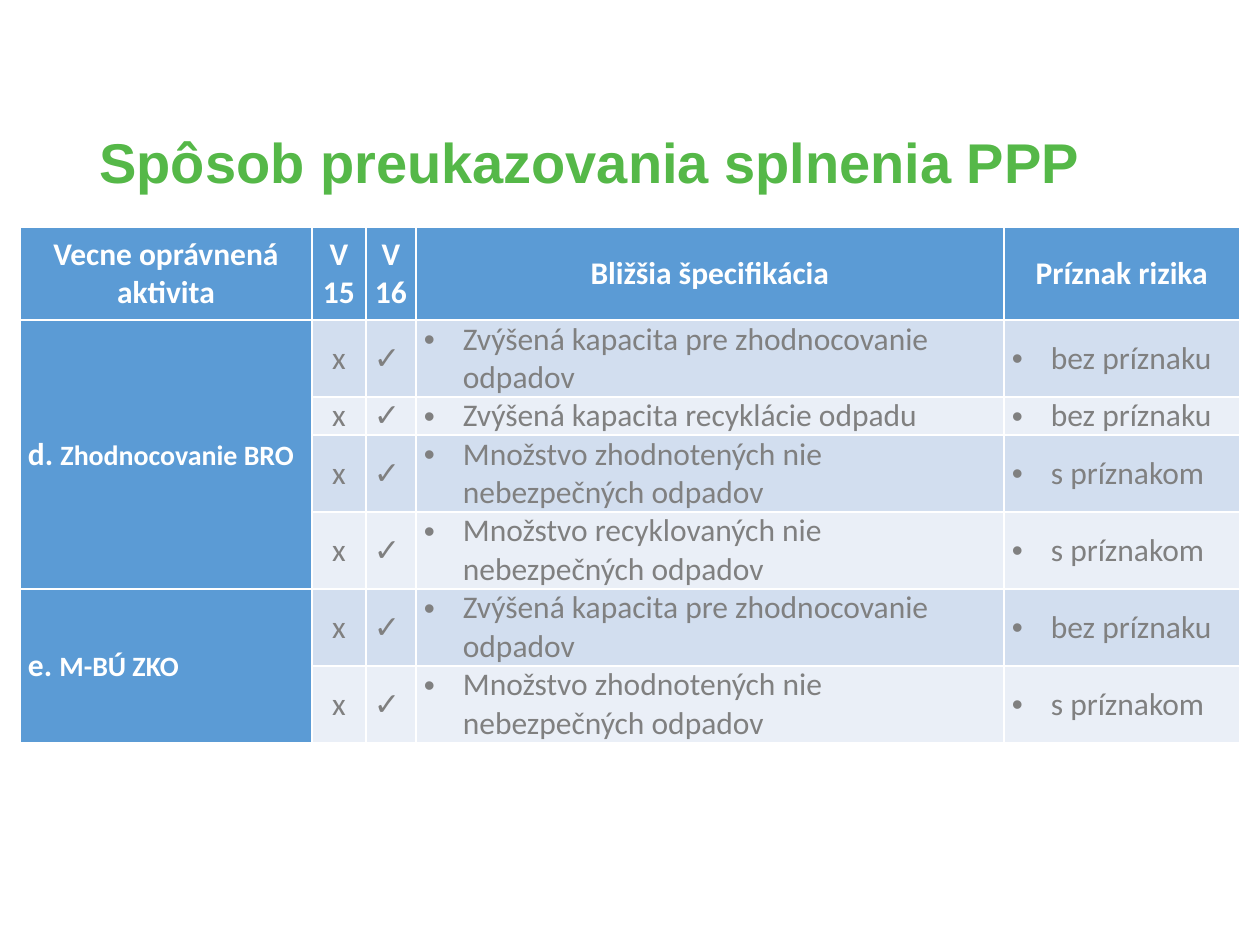
from lxml import etree
from pptx import Presentation, util as u
from pptx.dml.color import RGBColor
from pptx.enum import text
from pptx.oxml.ns import qn

# Content
TITLE = "Spôsob preukazovania splnenia PPP"
HEADERS = ["Vecne oprávnená aktivita", "V 15", "V 16", "Bližšia špecifikácia", "Príznak rizika"]
CAPACITY = "Zvýšená kapacita pre zhodnocovanie odpadov"
RECOVERED = "Množstvo zhodnotených nie nebezpečných odpadov"
ACTIVITIES = [
    ("d. ", "Zhodnocovanie BRO", [
        (CAPACITY, "bez príznaku"),
        ("Zvýšená kapacita recyklácie odpadu", "bez príznaku"),
        (RECOVERED, "s príznakom"),
        ("Množstvo recyklovaných nie nebezpečných odpadov", "s príznakom"),
    ]),
    ("e. ", "M-BÚ ZKO", [
        (CAPACITY, "bez príznaku"),
        (RECOVERED, "s príznakom"),
    ]),
]

# Layout in px, 126 to the inch
COLUMNS = [292, 54, 50, 588, 236]
ROWS = [93, 77, 38, 77, 77, 77, 77]
INSET, HANG = 8, 39
GREEN, BLUE, WHITE, GREY = "55B848", "5B9BD5", "FFFFFF", "808080"
BANDS = ["D2DEEF", "EAEFF7"]
LEFT, CENTER, JUSTIFY = text.PP_ALIGN.LEFT, text.PP_ALIGN.CENTER, text.PP_ALIGN.JUSTIFY


def px(n):
    return u.Emu(round(n * 914400 / 126))


def rgb(value):
    return RGBColor.from_string(value)


def style(font, name, size, color, bold):
    font.name, font.size, font.bold = name, u.Pt(size), bold
    font.color.rgb = rgb(color)


def add_bullet(paragraph):
    props = paragraph._p.get_or_add_pPr()
    props.set("marL", str(px(HANG)))
    props.set("indent", str(-px(HANG)))
    etree.SubElement(props, qn("a:buFont")).set("typeface", "Arial")
    etree.SubElement(props, qn("a:buChar")).set("char", "•")


def fill_cell(cell, runs, fill, color, bold, align, bullet=False):
    cell.fill.solid()
    cell.fill.fore_color.rgb = rgb(fill)
    cell.vertical_anchor = text.MSO_ANCHOR.MIDDLE
    cell.margin_left = cell.margin_right = px(INSET)
    cell.margin_top = cell.margin_bottom = 0
    paragraph = cell.text_frame.paragraphs[0]
    paragraph.alignment = align
    if bullet:
        add_bullet(paragraph)
    for words, size in runs:
        run = paragraph.add_run()
        run.text = words
        style(run.font, "Calibri", size, color, bold)


prs = Presentation()
prs.slide_width, prs.slide_height = u.Inches(10), u.Inches(7.5)
slide = prs.slides.add_slide(prs.slide_layouts[6])

# Title
title = slide.shapes.add_textbox(px(87), px(105), px(1086), px(121)).text_frame
title.word_wrap = True
title.vertical_anchor = text.MSO_ANCHOR.MIDDLE
heading = title.paragraphs[0]
heading.text = TITLE
heading.alignment = JUSTIFY
heading.line_spacing = 0.9
style(heading.font, "Arial", 32, GREEN, True)

# Table grid
table = slide.shapes.add_table(len(ROWS), len(COLUMNS), px(20), px(227),
                               px(sum(COLUMNS)), px(sum(ROWS))).table
for column, width in zip(table.columns, COLUMNS):
    column.width = px(width)
for row, height in zip(table.rows, ROWS):
    row.height = px(height)

# Header row
for c, label in enumerate(HEADERS):
    fill_cell(table.cell(0, c), [(label, 18)], BLUE, WHITE, True, CENTER)

# Activities, each spanning its indicators
r = 1
for letter, activity, indicators in ACTIVITIES:
    table.cell(r, 0).merge(table.cell(r + len(indicators) - 1, 0))
    fill_cell(table.cell(r, 0), [(letter, 18), (activity, 16)], BLUE, WHITE, True, JUSTIFY)
    for indicator, risk in indicators:
        band = BANDS[(r - 1) % 2]
        values = [("x", CENTER, False), ("✓", LEFT, False),
                  (indicator, LEFT, True), (risk, LEFT, True)]
        for c, (words, align, bullet) in enumerate(values, 1):
            fill_cell(table.cell(r, c), [(words, 18)], band, GREY, False, align, bullet)
        r += 1

prs.save("out.pptx")
